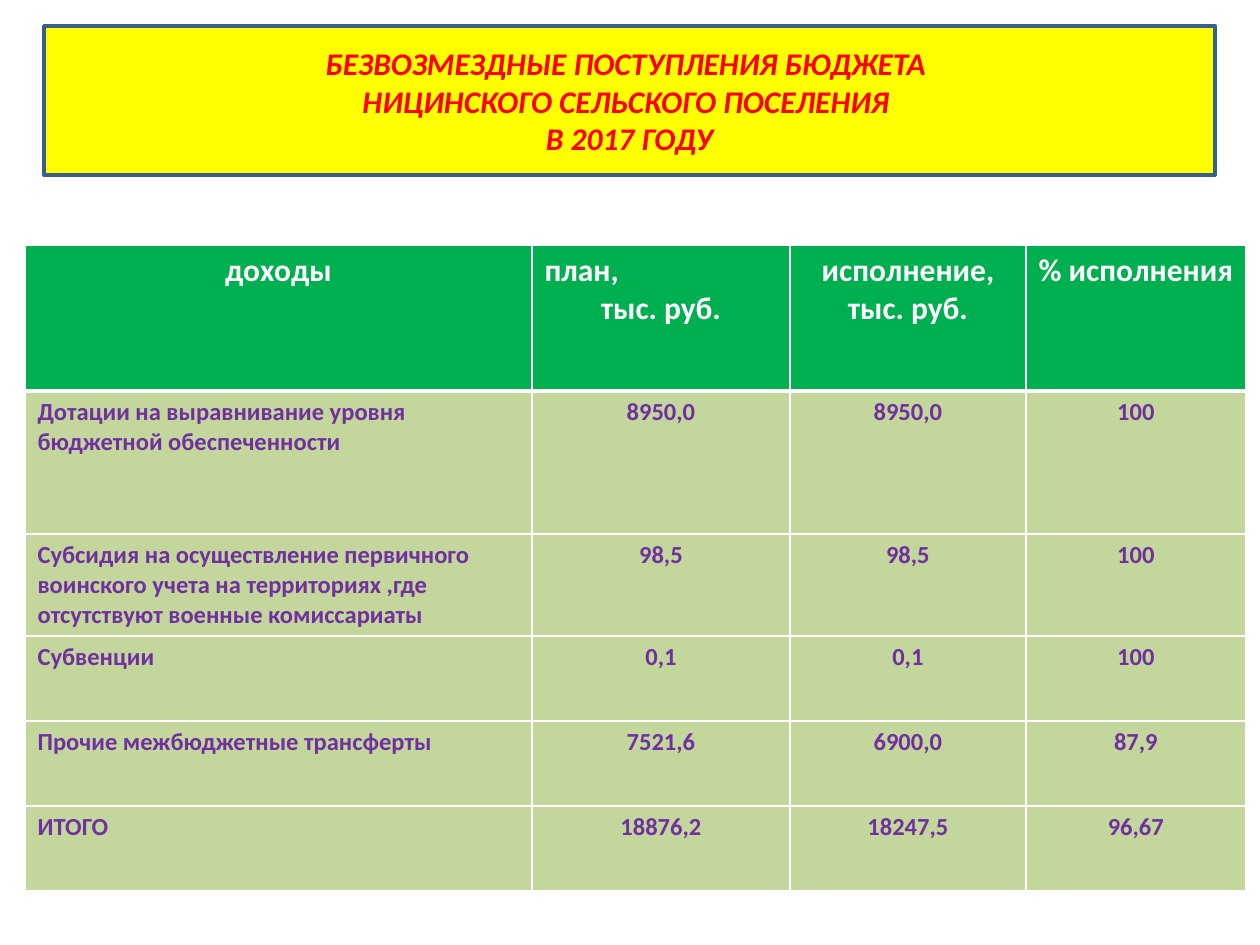
from typing import NamedTuple

from lxml.etree import SubElement
from pptx import Presentation
from pptx.dml.color import RGBColor
from pptx.enum.shapes import MSO_SHAPE
from pptx.enum.text import MSO_ANCHOR, PP_ALIGN
from pptx.oxml.ns import qn
from pptx.util import Emu, Pt

EMU_PER_PX = 914400 / 126
LEFT, CENTER = PP_ALIGN.LEFT, PP_ALIGN.CENTER
WHITE, GREEN, PALE_GREEN, PURPLE = "FFFFFF", "00B050", "C3D69B", "7030A0"
YELLOW, RED, NAVY = "FFFF00", "FF0000", "3A5F8C"


class Income(NamedTuple):
    source: str
    plan: str
    actual: str
    percent: str


class Line(NamedTuple):
    text: str
    align: PP_ALIGN = CENTER


TITLE = [
    Line("БЕЗВОЗМЕЗДНЫЕ ПОСТУПЛЕНИЯ БЮДЖЕТА "),
    Line("НИЦИНСКОГО СЕЛЬСКОГО ПОСЕЛЕНИЯ "),
    Line("В 2017 ГОДУ"),
]
HEADINGS = [
    [Line("доходы")],
    [Line("план,", LEFT), Line("тыс. руб.")],
    [Line("исполнение, тыс. руб.")],
    [Line("% исполнения")],
]
INCOMES = [
    Income("Дотации на выравнивание уровня бюджетной обеспеченности",
           "8950,0", "8950,0", "100"),
    Income("Субсидия на осуществление первичного воинского учета на территориях "
           ",где отсутствуют военные комиссариаты", "98,5", "98,5", "100"),
    Income("Субвенции", "0,1", "0,1", "100"),
    Income("Прочие межбюджетные трансферты", "7521,6", "6900,0", "87,9"),
    Income("ИТОГО", "18876,2", "18247,5", "96,67"),
]
COLUMN_WIDTHS = [507, 258, 236, 220]
ROW_HEIGHTS = [146, 143, 102, 85, 85, 85]


def px(length: int) -> Emu:
    return Emu(round(length * EMU_PER_PX))


def paint(fill_format, color: str) -> None:
    fill_format.solid()
    fill_format.fore_color.rgb = RGBColor.from_string(color)


def write(frame, lines: list[Line], *, size: int, color: str,
          italic: bool = False) -> None:
    """Write one bold paragraph per line."""
    frame.word_wrap = True
    for index, line in enumerate(lines):
        paragraph = frame.add_paragraph() if index else frame.paragraphs[0]
        paragraph.alignment = line.align
        run = paragraph.add_run()
        run.text = line.text
        run.font.name = "Calibri"
        run.font.size = Pt(size)
        run.font.bold = True
        run.font.italic = italic
        run.font.color.rgb = RGBColor.from_string(color)


def add_borders(cell, *, top: int = 1, bottom: int = 1) -> None:
    """Add white borders, widths in points; call before the cell is filled."""
    properties = cell._tc.get_or_add_tcPr()
    for tag, width in (("lnL", 1), ("lnR", 1), ("lnT", top), ("lnB", bottom)):
        border = SubElement(properties, qn(f"a:{tag}"), w=str(Pt(width)))
        SubElement(SubElement(border, qn("a:solidFill")), qn("a:srgbClr"), val=WHITE)


def add_title(slide) -> None:
    banner = slide.shapes.add_shape(MSO_SHAPE.RECTANGLE, px(44), px(26), px(1171), px(149))
    banner.shadow.inherit = False
    paint(banner.fill, YELLOW)
    paint(banner.line.fill, NAVY)
    banner.line.width = Pt(2)
    banner.text_frame.vertical_anchor = MSO_ANCHOR.MIDDLE
    write(banner.text_frame, TITLE, size=18, color=RED, italic=True)


def add_income_table(slide) -> None:
    table = slide.shapes.add_table(
        len(ROW_HEIGHTS), len(COLUMN_WIDTHS), px(25), px(245),
        px(sum(COLUMN_WIDTHS)), px(sum(ROW_HEIGHTS))).table
    for column, width in zip(table.columns, COLUMN_WIDTHS):
        column.width = px(width)
    for row, height in zip(table.rows, ROW_HEIGHTS):
        row.height = px(height)

    for column, heading in enumerate(HEADINGS):
        cell = table.cell(0, column)
        add_borders(cell, bottom=3)
        paint(cell.fill, GREEN)
        write(cell.text_frame, heading, size=18, color=WHITE)

    for row, income in enumerate(INCOMES, start=1):
        for column, value in enumerate(income):
            cell = table.cell(row, column)
            add_borders(cell, top=3 if row == 1 else 1)
            paint(cell.fill, PALE_GREEN)
            write(cell.text_frame, [Line(value, CENTER if column else LEFT)],
                  size=14, color=PURPLE)


def main() -> None:
    presentation = Presentation()
    presentation.slide_width, presentation.slide_height = px(1260), px(945)
    slide = presentation.slides.add_slide(presentation.slide_layouts[6])
    add_income_table(slide)
    add_title(slide)
    presentation.save("out.pptx")


if __name__ == "__main__":
    main()
